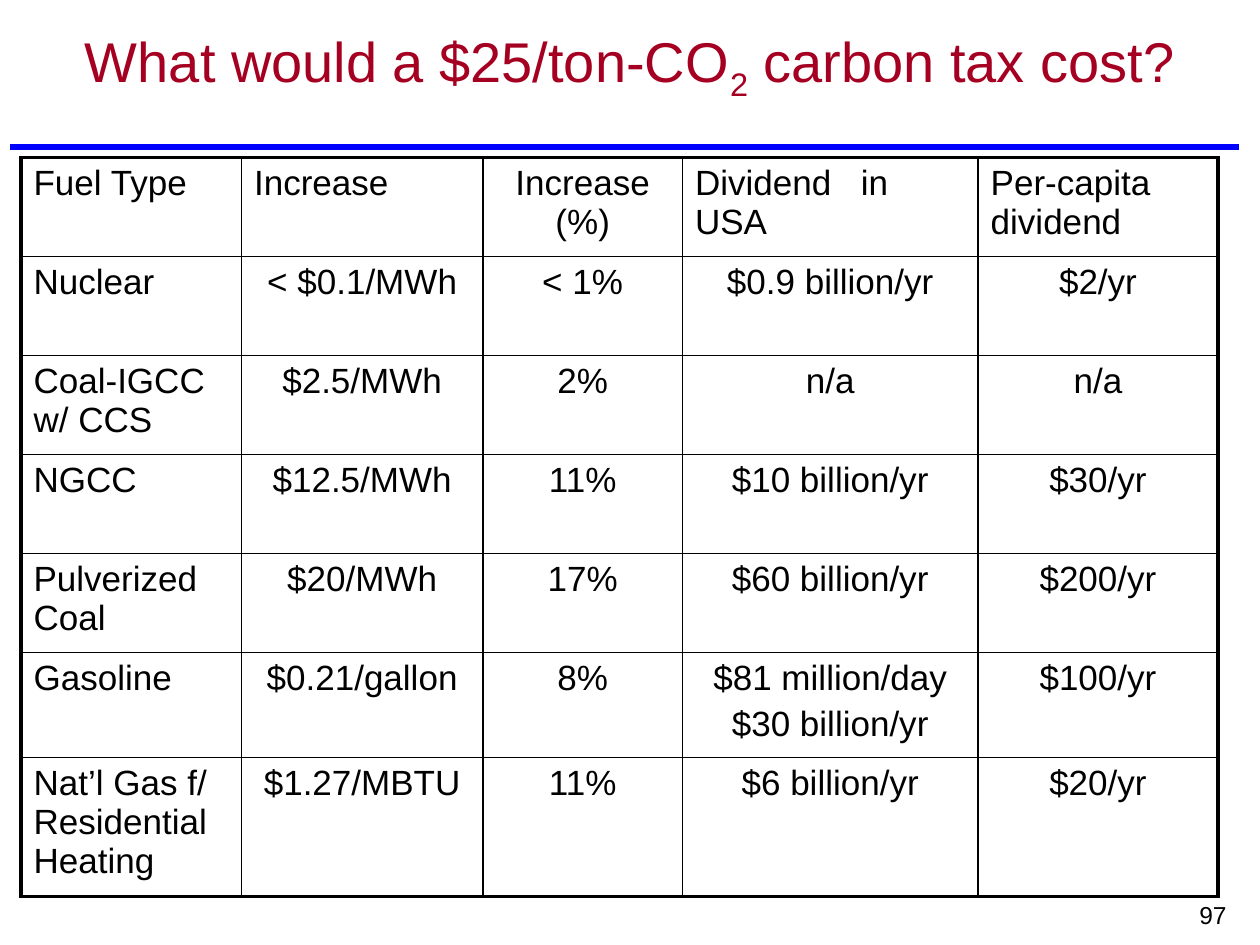
from lxml.etree import SubElement
from pptx import Presentation
from pptx.dml.color import RGBColor
from pptx.enum.shapes import MSO_CONNECTOR
from pptx.enum.text import MSO_ANCHOR, PP_ALIGN
from pptx.oxml import parse_xml
from pptx.oxml.ns import nsdecls, qn
from pptx.util import Pt

FONT = "Arial"
BLACK, RED, BLUE = "000000", "A50021", "0000FF"
THIN, THICK = 1, 2.25
COL_WIDTHS = [126, 138, 114, 169, 137]
ROW_HEIGHTS = [56.6] * 5 + [60, 79]
DIVIDEND_TAB = 94.8
ROWS = [
    ["Fuel Type", "Increase", "Increase (%)", "Dividend\tin\vUSA", "Per-capita dividend"],
    ["Nuclear", "< $0.1/MWh", "< 1%", "$0.9 billion/yr", "$2/yr"],
    ["Coal-IGCC w/ CCS", "$2.5/MWh", "2%", "n/a", "n/a"],
    ["NGCC", "$12.5/MWh", "11%", "$10 billion/yr", "$30/yr"],
    ["Pulverized Coal", "$20/MWh", "17%", "$60 billion/yr", "$200/yr"],
    ["Gasoline", "$0.21/gallon", "8%", "$81 million/day\n$30 billion/yr", "$100/yr"],
    ["Nat’l Gas f/ Residential Heating", "$1.27/MBTU", "11%", "$6 billion/yr", "$20/yr"],
]


def rgb(color):
    return RGBColor.from_string(color)


def format_run(r, size, color):
    r.font.name = FONT
    r.font.size = Pt(size)
    r.font.color.rgb = rgb(color)


def add_text(s, x, y, w, h, parts, size, color, align, anchor):
    tf = s.shapes.add_textbox(Pt(x), Pt(y), Pt(w), Pt(h)).text_frame
    tf.word_wrap = True
    tf.vertical_anchor = anchor
    p = tf.paragraphs[0]
    p.alignment = align
    for text, baseline in parts:
        r = p.add_run()
        r.text = text
        format_run(r, size, color)
        if baseline:
            r.font._element.set("baseline", str(baseline * 1000))


def add_rule(s, x1, x2, y, color, width):
    line = s.shapes.add_connector(MSO_CONNECTOR.STRAIGHT, Pt(x1), Pt(y), Pt(x2), Pt(y))
    line.line.color.rgb = rgb(color)
    line.line.width = Pt(width)
    SubElement(line._element.spPr, qn("a:effectLst"))


def set_borders(cell, widths):
    tcPr = cell._tc.get_or_add_tcPr()
    for i, (side, width) in enumerate(zip("LRTB", widths)):
        tcPr.insert(i, parse_xml(
            f'<a:ln{side} {nsdecls("a")} w="{Pt(width)}"><a:solidFill>'
            f'<a:srgbClr val="{BLACK}"/></a:solidFill></a:ln{side}>'))


def add_tab(p, position):
    tabs = SubElement(p._p.get_or_add_pPr(), qn("a:tabLst"))
    SubElement(tabs, qn("a:tab"), pos=str(Pt(position)), algn="l")


def fill_cell(cell, text, align):
    cell.fill.background()
    tf = cell.text_frame
    tf.text = text
    for i, p in enumerate(tf.paragraphs):
        p.alignment = align
        if i:
            p.space_before = Pt(4)
        if "\t" in p.text:
            add_tab(p, DIVIDEND_TAB)
        for r in p.runs:
            format_run(r, 20, BLACK)


def add_cost_table(s, x, y):
    n_rows, n_cols = len(ROWS), len(COL_WIDTHS)
    table = s.shapes.add_table(n_rows, n_cols, Pt(x), Pt(y),
                               Pt(sum(COL_WIDTHS)), Pt(sum(ROW_HEIGHTS))).table
    table.first_row = table.horz_banding = False
    for col, width in zip(table.columns, COL_WIDTHS):
        col.width = Pt(width)
    for row, height in zip(table.rows, ROW_HEIGHTS):
        row.height = Pt(height)
    for i, texts in enumerate(ROWS):
        for j, text in enumerate(texts):
            centered = j == 2 or (i > 0 and j > 0)
            cell = table.cell(i, j)
            fill_cell(cell, text, PP_ALIGN.CENTER if centered else PP_ALIGN.LEFT)
            edges = (j == 0, j == n_cols - 1, i == 0, i == n_rows - 1)
            set_borders(cell, [THICK if edge else THIN for edge in edges])


def main():
    prs = Presentation()
    prs.slide_width, prs.slide_height = Pt(720), Pt(540)
    s = prs.slides.add_slide(prs.slide_layouts[6])
    add_rule(s, 6, 708, 84, BLUE, 3)
    add_text(s, 660, 510.5, 48, 19, [("97", 0)], 14, BLACK, PP_ALIGN.RIGHT, MSO_ANCHOR.TOP)
    title = [("What would a $25/ton-CO", 0), ("2", -25), (" carbon tax cost?", 0)]
    add_text(s, 18, 6, 684, 62.5, title, 32, RED, PP_ALIGN.CENTER, MSO_ANCHOR.MIDDLE)
    add_cost_table(s, 12, 90)
    prs.save("out.pptx")


if __name__ == "__main__":
    main()
